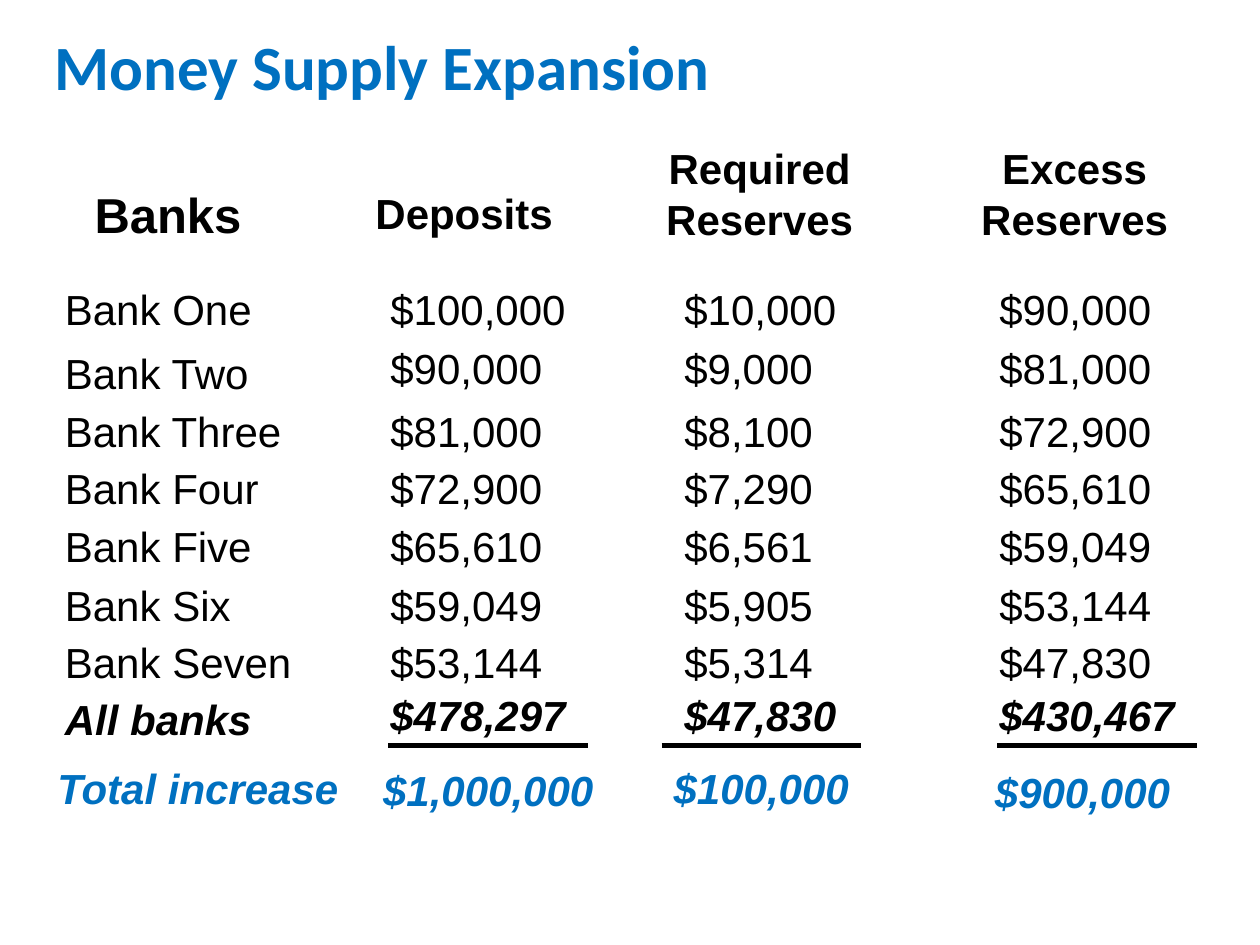
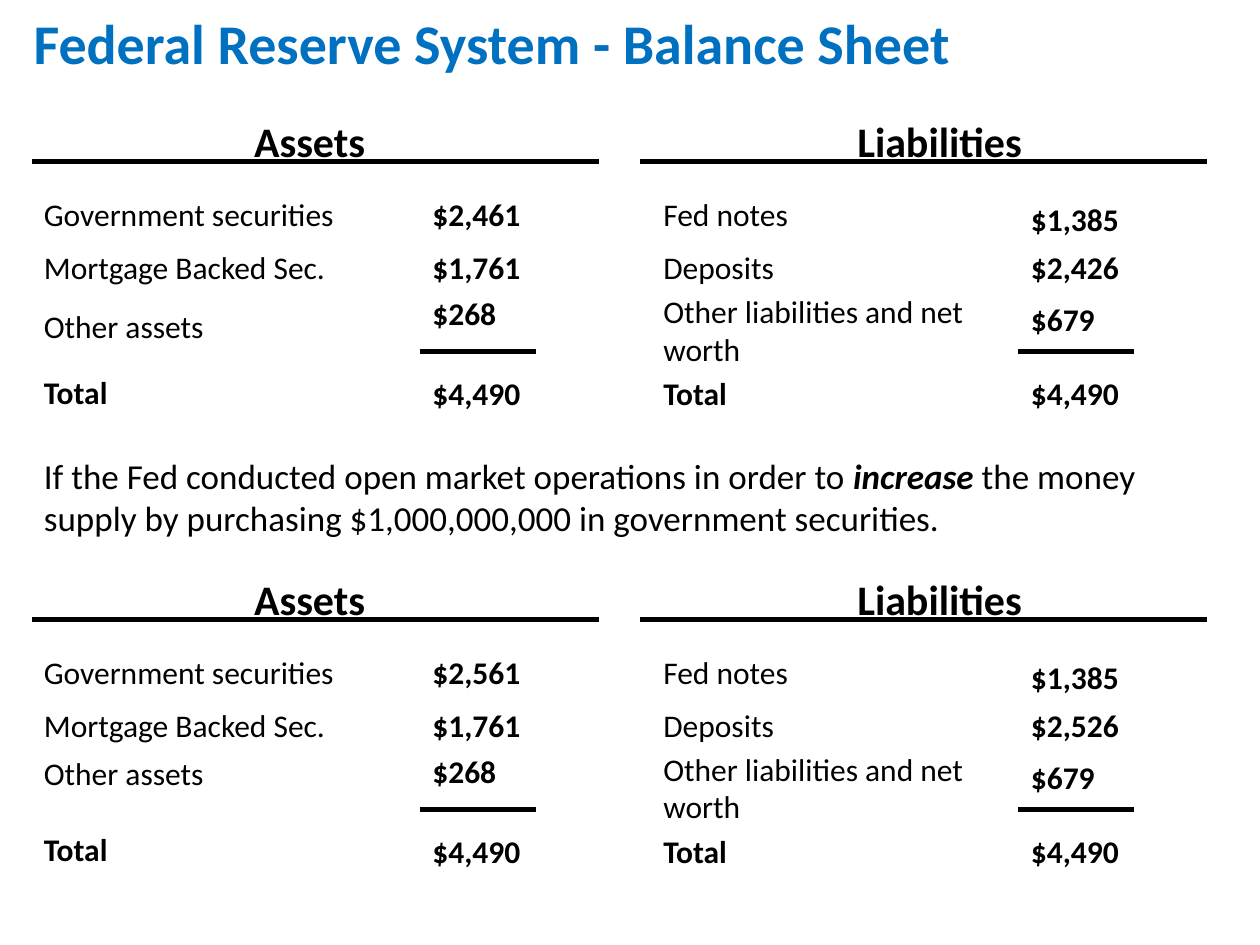
from pptx import Presentation
from pptx.dml.color import RGBColor
from pptx.enum.shapes import MSO_CONNECTOR as Link
from pptx.enum.text import MSO_ANCHOR as Anchor, PP_ALIGN as Align
from pptx.oxml.ns import qn
from pptx.util import Inches, Pt
from lxml.etree import SubElement

WIDE, HIGH = Inches(10), Inches(7.5)
COLS, ROWS = 120, 90
BLUE, BLACK = "0070C0", "000000"
SANS, HEAD = "Arial", "Calibri"


def paint(code):
    return RGBColor.from_string(code)


def across(n):
    return round(WIDE * n / COLS)


def down(n):
    return round(HIGH * n / ROWS)


def style(run, font, size, color=BLACK, bold=False, slant=False):
    run.font.name = font
    run.font.size = Pt(size)
    run.font.bold = bold
    run.font.italic = slant
    run.font.color.rgb = paint(color)


def title(slide, box, words, size):
    x, y, w, h = box
    shape = slide.shapes.title
    shape.left, shape.top = across(x), down(y)
    shape.width, shape.height = across(w), down(h)
    frame = shape.text_frame
    frame.word_wrap = True
    frame.vertical_anchor = Anchor.TOP
    para = frame.paragraphs[0]
    para.alignment = Align.LEFT
    para.line_spacing = 0.7
    run = para.add_run()
    run.text = words
    style(run, HEAD, size, BLUE, True)


def write(slide, box, runs, font, size, color=BLACK, mid=False):
    x, y, w, h = box
    shape = slide.shapes.add_textbox(across(x), down(y), across(w), down(h))
    frame = shape.text_frame
    frame.word_wrap = True
    para = frame.paragraphs[0]
    para.alignment = Align.CENTER if mid else Align.LEFT
    for words, bold, slant in runs:
        run = para.add_run()
        run.text = words
        style(run, font, size, color, bold, slant)


def rule(slide, x, y, w):
    line = slide.shapes.add_connector(
        Link.STRAIGHT, across(x), down(y), across(x + w), down(y))
    line.line.color.rgb = paint(BLACK)
    line.line.width = Pt(3)
    SubElement(line._element.spPr, qn("a:effectLst"))


def heads(slide, top):
    for words, x, y, w, h, size in (
            ("Banks", 7, 4, 18, 6.2, 28),
            ("Deposits", 31.4, 4.3, 25.6, 5.5, 24),
            ("Required Reserves", 60, 0, 24.7, 10, 24),
            ("Excess Reserves", 90, 0, 24.7, 10, 24)):
        write(slide, (x, top + y, w, h), [(words, True, False)],
              SANS, size, mid=True)


def banks(slide, left, top):
    rows = (
        (0, 0, "Bank One", "$100,000", "$10,000", "$90,000"),
        (5.6, 0.5, "Bank Two", "$90,000", "$9,000", "$81,000"),
        (11.6, 0, "Bank Three", "$81,000", "$8,100", "$72,900"),
        (17.1, 0, "Bank Four", "$72,900", "$7,290", "$65,610"),
        (22.6, 0, "Bank Five", "$65,610", "$6,561", "$59,049"),
        (28.2, 0, "Bank Six", "$59,049", "$5,905", "$53,144"),
        (33.6, 0, "Bank Seven", "$53,144", "$5,314", "$47,830"),
        (38.7, 0.4, "All banks", "$478,297", "$47,830", "$430,467"))
    stops = ((0, 27), (31, 21), (59, 21), (89, 21))
    for y, drop, *cells in rows:
        bold = cells[0] == "All banks"
        for n, (words, (x, w)) in enumerate(zip(cells, stops)):
            shift = 0 if n else drop
            write(slide, (left + x, top + y + shift, w, 5.6),
                  [(words, bold, bold)], SANS, 24)
    for x in (32, 58, 90):
        rule(slide, left + x, top + 44.6, 19)


def total(slide, top):
    for words, x, y, w, mid in (
            ("Total increase", 4.3, 0, 32.7, False),
            ("$1,000,000", 32, 0.2, 29, True),
            ("$100,000", 61, 0, 23, True),
            ("$900,000", 91, 0.4, 24.2, True)):
        write(slide, (x, top + y, w, 5.6), [(words, True, True)],
              SANS, 24, BLUE, mid)


def panel(slide, box, name, inset, indent, column, rows):
    left, top, wide = box
    write(slide, (left + inset, top, 31, 5.6), [(name, True, False)],
          HEAD, 24, mid=True)
    rule(slide, left, top + 5, wide)
    for label, y, amount, drop in rows:
        write(slide, (left + indent, top + y, 35, 4.4),
              [(label, label == "Total", False)], HEAD, 18)
        write(slide, (left + column, top + drop, 14, 4.4),
              [(amount, True, False)], HEAD, 18)
    rule(slide, left + column, top + 23.1, 11)


def sheet(slide, top, bonds, funds, other):
    panel(slide, (3, top, 54), "Assets", 11, 0, 37, (
        ("Government securities", 7.6, bonds, 7.6),
        ("Mortgage Backed Sec.", 12.6, "$1,761", 12.6),
        ("Other assets", other, "$268", 17),
        ("Total", 24.5, "$4,490", 24.6)))
    panel(slide, (61, top, 54), "Liabilities", 13, 1, 36, (
        ("Fed notes", 7.6, "$1,385", 8.1),
        ("Deposits", 12.6, funds, 12.6),
        ("Other liabilities and net worth", 16.8, "$679", 17.6),
        ("Total", 24.6, "$4,490", 24.6)))


def supply(slide):
    title(slide, (4, 4, 112, 6.6), "Money Supply Expansion", 36)
    heads(slide, 13)
    banks(slide, 5, 26.4)
    total(slide, 72)


def balance(slide):
    title(slide, (2, 2, 109, 5.9),
          "Federal Reserve System - Balance Sheet", 32)
    sheet(slide, 10.4, "$2,461", "$2,426", 18.2)
    write(slide, (3, 42.7, 110, 8.5), [
        ("If the Fed conducted open market operations in order to ",
         False, False),
        ("increase", True, True),
        (" the money supply by purchasing $1,000,000,000 in "
         "government securities.", False, False)], HEAD, 20)
    sheet(slide, 54, "$2,561", "$2,526", 17.2)


def main():
    deck = Presentation()
    deck.slide_width, deck.slide_height = WIDE, HIGH
    for fill in (supply, balance):
        fill(deck.slides.add_slide(deck.slide_layouts[5]))
    deck.save("out.pptx")


if __name__ == "__main__":
    main()
